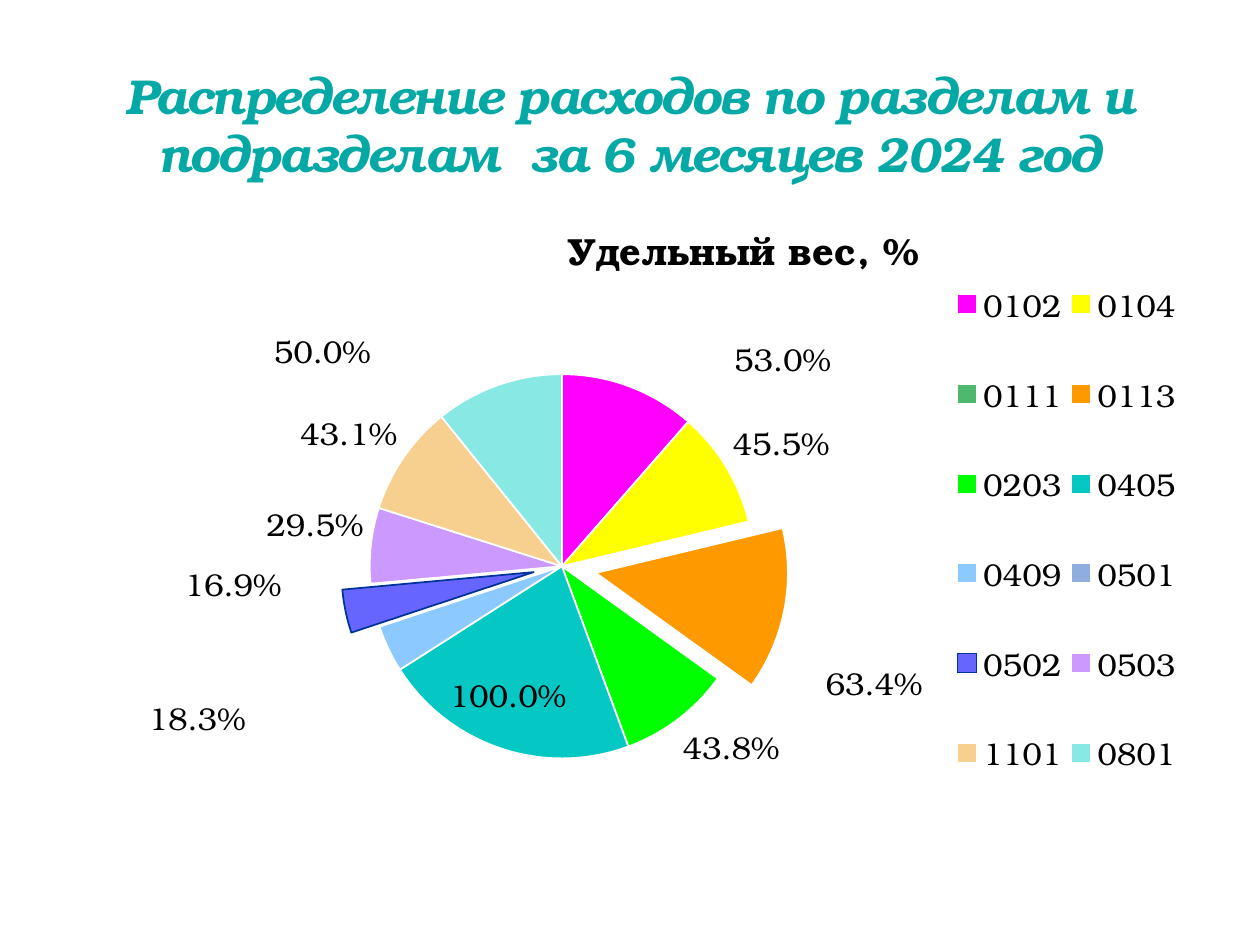
from lxml import etree
from pptx import Presentation, util as u
from pptx.chart.data import CategoryChartData
from pptx.dml.color import RGBColor
from pptx.enum import chart as ch, text
from pptx.oxml.ns import qn

SECTIONS = [
    ("0102", 0.53, "FF00FF"), ("0104", 0.455, "FFFF00"), ("0111", 0, "4FB86F"),
    ("0113", 0.634, "FF9900"), ("0203", 0.438, "00FF00"), ("0405", 1, "05C8C4"),
    ("0409", 0.183, "8CC9FE"), ("0501", 0, "90ADDF"), ("0502", 0.169, "6666FF"),
    ("0503", 0.295, "CC99FF"), ("1101", 0.431, "F7D08F"), ("0801", 0.5, "88E8E4"),
]
LABEL_SHIFTS = {"0102": (0.09, 0), "0113": (0.03, 0.08), "0405": (0.06, -0.13),
                "0409": (-0.12, 0.07), "0502": (-0.05, -0.08), "0801": (-0.11, -0.01)}
EXPLOSIONS = {"0113": 18, "0502": 15}
LABEL_FORMAT = "0.0%;;"


def rgb(value):
    return RGBColor.from_string(value)


def add_val(parent, tag, value):
    etree.SubElement(parent, qn(tag)).set("val", str(value))


def make_layout(x, y, w=None, h=None, inner=False, edge=True):
    layout = etree.Element(qn("c:layout"))
    manual = etree.SubElement(layout, qn("c:manualLayout"))
    if inner:
        add_val(manual, "c:layoutTarget", "inner")
    if edge:
        add_val(manual, "c:xMode", "edge")
        add_val(manual, "c:yMode", "edge")
    for tag, value in (("c:x", x), ("c:y", y), ("c:w", w), ("c:h", h)):
        if value is not None:
            add_val(manual, tag, value)
    return layout


def place(parent, layout, after=None):
    for old in parent.findall(qn("c:layout")):
        parent.remove(old)
    if after is None:
        parent.insert(0, layout)
    else:
        parent.find(qn(after)).addnext(layout)


class Deck:
    """Holds the style and the current slide."""

    font = "TeX Gyre Bonum"

    def __init__(self, prs):
        self.s = prs.slides.add_slide(prs.slide_layouts[6])

    def style(self, font, size, color, bold=False, italic=False):
        font.name, font.size = self.font, u.Pt(size)
        font.bold, font.italic = bold, italic
        font.color.rgb = rgb(color)

    def title(self, words, x, y, w, h):
        sp = self.s.shapes.add_textbox(u.Inches(x), u.Inches(y), u.Inches(w), u.Inches(h))
        tf = sp.text_frame
        tf.word_wrap = True
        tf.vertical_anchor = text.MSO_ANCHOR.BOTTOM
        tf.text = words
        p = tf.paragraphs[0]
        p.alignment = text.PP_ALIGN.CENTER
        r = p.runs[0]
        self.style(r.font, 28, "04A8A4", True, True)
        r._r.get_or_add_rPr().set("spc", "-100")

    def pie(self, heading, sections, x, y, w, h):
        data = CategoryChartData(number_format="0.0%")
        data.categories = [code for code, _, _ in sections]
        data.add_series(heading, [share for _, share, _ in sections])
        chart = self.s.shapes.add_chart(
            ch.XL_CHART_TYPE.PIE, u.Inches(x), u.Inches(y), u.Inches(w), u.Inches(h), data).chart
        self.style(chart.font, 18, "000000")
        self.heading(chart, heading)
        self.legend(chart)
        place(chart._chartSpace.chart.plotArea, make_layout(0.27, 0.26, 0.34, 0.61, inner=True))
        plot = chart.plots[0]
        plot.vary_by_categories = True
        series = plot.series[0]
        self.labels(series)
        for i, (code, _, color) in enumerate(sections):
            self.slice(series.points[i], code, color)

    def heading(self, chart, words):
        chart.has_title = True
        title = chart.chart_title
        title.text_frame.text = words
        self.style(title.text_frame.paragraphs[0].runs[0].font, 21.6, "000000", True)
        place(title._element, make_layout(0.44, 0), "c:tx")
        title.include_in_layout = False

    def legend(self, chart):
        chart.has_legend = True
        legend = chart.legend
        legend.position = ch.XL_LEGEND_POSITION.RIGHT
        legend.include_in_layout = False
        self.style(legend.font, 18, "000000")
        place(legend._element, make_layout(0.78, 0.04, 0.21, 0.93), "c:legendPos")

    def labels(self, series):
        labels = series.data_labels
        labels.show_value = True
        labels.number_format = LABEL_FORMAT
        labels.number_format_is_linked = False
        labels.position = ch.XL_LABEL_POSITION.OUTSIDE_END
        self.style(labels.font, 18, "000000")
        for lines in labels._element.findall(qn("c:showLeaderLines")):
            lines.set("val", "0")

    def slice(self, point, code, color):
        fmt = point.format
        fmt.fill.solid()
        fmt.fill.fore_color.rgb = rgb(color)
        fmt.line.color.rgb = rgb("003399" if code == "0502" else "FFFFFF")
        fmt.line.width = u.Pt(1)
        if code in EXPLOSIONS:
            sp_pr = fmt.fill._xPr
            explosion = etree.Element(qn("c:explosion"))
            explosion.set("val", str(EXPLOSIONS[code]))
            sp_pr.addprevious(explosion)
        if code in LABEL_SHIFTS:
            label = point.data_label
            self.style(label.font, 18, "000000")
            label.position = ch.XL_LABEL_POSITION.OUTSIDE_END
            element = label._dLbl
            place(element, make_layout(*LABEL_SHIFTS[code], edge=False), "c:idx")
            number = etree.Element(qn("c:numFmt"), formatCode=LABEL_FORMAT, sourceLinked="0")
            element.find(qn("c:layout")).addnext(number)


def main():
    prs = Presentation()
    prs.slide_width, prs.slide_height = u.Inches(10), u.Inches(7.5)
    deck = Deck(prs)
    deck.pie("Удельный вес, %", SECTIONS, 0.5, 1.67, 9, 5)
    deck.title("Распределение расходов по разделам и подразделам  за 6 месяцев 2024 год",
               0.5, 0.17, 9, 1.33)
    prs.save("out.pptx")


if __name__ == "__main__":
    main()
